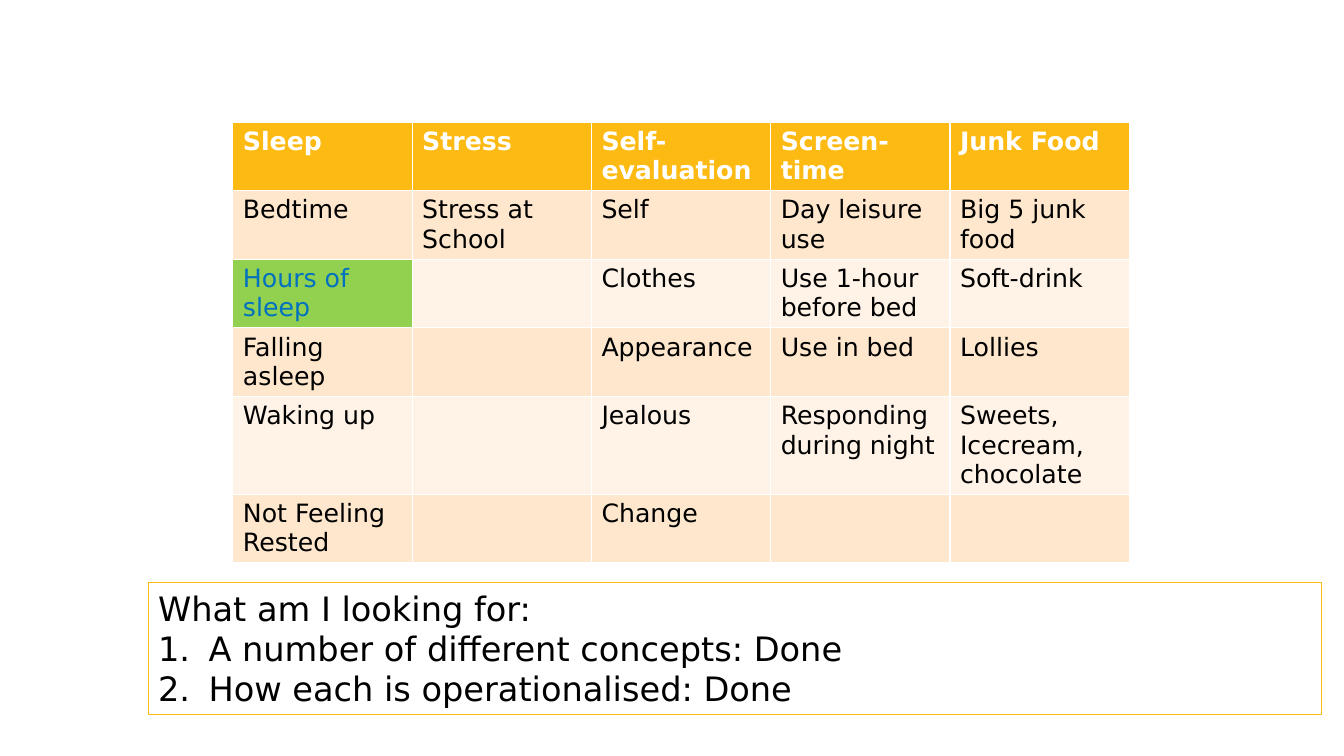
"""Build a slide listing survey concepts and how each is measured."""
from dataclasses import dataclass

from lxml.etree import SubElement
from pptx import Presentation
from pptx.dml.color import RGBColor
from pptx.enum.text import MSO_AUTO_SIZE
from pptx.oxml.ns import qn
from pptx.slide import Slide
from pptx.table import _Cell
from pptx.util import Inches, Pt

WHITE = RGBColor(0xFF, 0xFF, 0xFF)
BLACK = RGBColor(0x00, 0x00, 0x00)
AMBER = RGBColor(0xFD, 0xBA, 0x12)
PEACH = RGBColor(0xFE, 0xE7, 0xCC)
CREAM = RGBColor(0xFF, 0xF3, 0xE7)
GREEN = RGBColor(0x92, 0xD0, 0x50)
BLUE = RGBColor(0x00, 0x70, 0xC0)
FONT_NAME = "DejaVu Sans"


@dataclass(frozen=True)
class CellStyle:
    fill: RGBColor
    color: RGBColor = BLACK
    bold: bool = False


HEADER = CellStyle(AMBER, WHITE, True)
BANDS = (CellStyle(CREAM), CellStyle(PEACH))
HIGHLIGHT = CellStyle(GREEN, BLUE)
HIGHLIGHTED_TEXT = "Hours of sleep"

CONCEPT_ROWS = [
    ["Sleep", "Stress", "Self-evaluation", "Screen-time", "Junk Food"],
    ["Bedtime", "Stress at School", "Self", "Day leisure use", "Big 5 junk food"],
    ["Hours of sleep", "", "Clothes", "Use 1-hour before bed", "Soft-drink"],
    ["Falling asleep", "", "Appearance", "Use in bed", "Lollies"],
    ["Waking up", "", "Jealous", "Responding during night",
     "Sweets, Icecream, chocolate"],
    ["Not Feeling Rested", "", "Change", "", ""],
]
QUESTION = "What am I looking for:"
ANSWERS = [
    "A number of different concepts: Done",
    "How each is operationalised: Done",
]


def choose_style(row_index: int, text: str) -> CellStyle:
    """Return the style of a cell from its row and text."""
    if row_index == 0:
        return HEADER
    return HIGHLIGHT if text == HIGHLIGHTED_TEXT else BANDS[row_index % 2]


def fill_cell(cell: _Cell, text: str, style: CellStyle) -> None:
    """Write and colour one table cell."""
    cell.text = text
    cell.fill.solid()
    cell.fill.fore_color.rgb = style.fill
    font = cell.text_frame.paragraphs[0].font
    font.name = FONT_NAME
    font.size = Pt(18)
    font.bold = style.bold
    font.color.rgb = style.color


def add_concept_table(page: Slide) -> None:
    """Add the table of concepts and their measures."""
    row_count, column_count = len(CONCEPT_ROWS), len(CONCEPT_ROWS[0])
    table = page.shapes.add_table(
        row_count, column_count, Inches(2.31), Inches(1.21),
        Inches(8.89), Inches(0.41 * row_count)).table
    for row_index, row in enumerate(CONCEPT_ROWS):
        for column_index, text in enumerate(row):
            fill_cell(table.cell(row_index, column_index), text,
                      choose_style(row_index, text))


def add_question_box(page: Slide) -> None:
    """Add the outlined box with the question and numbered answers."""
    box = page.shapes.add_textbox(
        Inches(1.47), Inches(5.78), Inches(11.64), Inches(1.31))
    box.line.color.rgb = AMBER
    box.line.width = Pt(0.75)
    frame = box.text_frame
    frame.word_wrap = True
    frame.auto_size = MSO_AUTO_SIZE.SHAPE_TO_FIT_TEXT
    frame.text = "\n".join([QUESTION, *ANSWERS])
    for index, para in enumerate(frame.paragraphs):
        if index > 0:
            properties = para._p.get_or_add_pPr()
            properties.set("marL", str(Inches(0.5)))
            properties.set("indent", str(-Inches(0.5)))
            SubElement(properties, qn("a:buFont"), typeface="+mj-lt")
            SubElement(properties, qn("a:buAutoNum"), type="arabicPeriod")
        para.font.name = FONT_NAME
        para.font.size = Pt(24)
        para.font.color.rgb = BLACK


def main() -> None:
    """Create the deck and save it."""
    deck = Presentation()
    deck.slide_width = Inches(13.33)
    deck.slide_height = Inches(7.5)
    page = deck.slides.add_slide(deck.slide_layouts[6])
    add_concept_table(page)
    add_question_box(page)
    deck.save("out.pptx")


if __name__ == "__main__":
    main()
